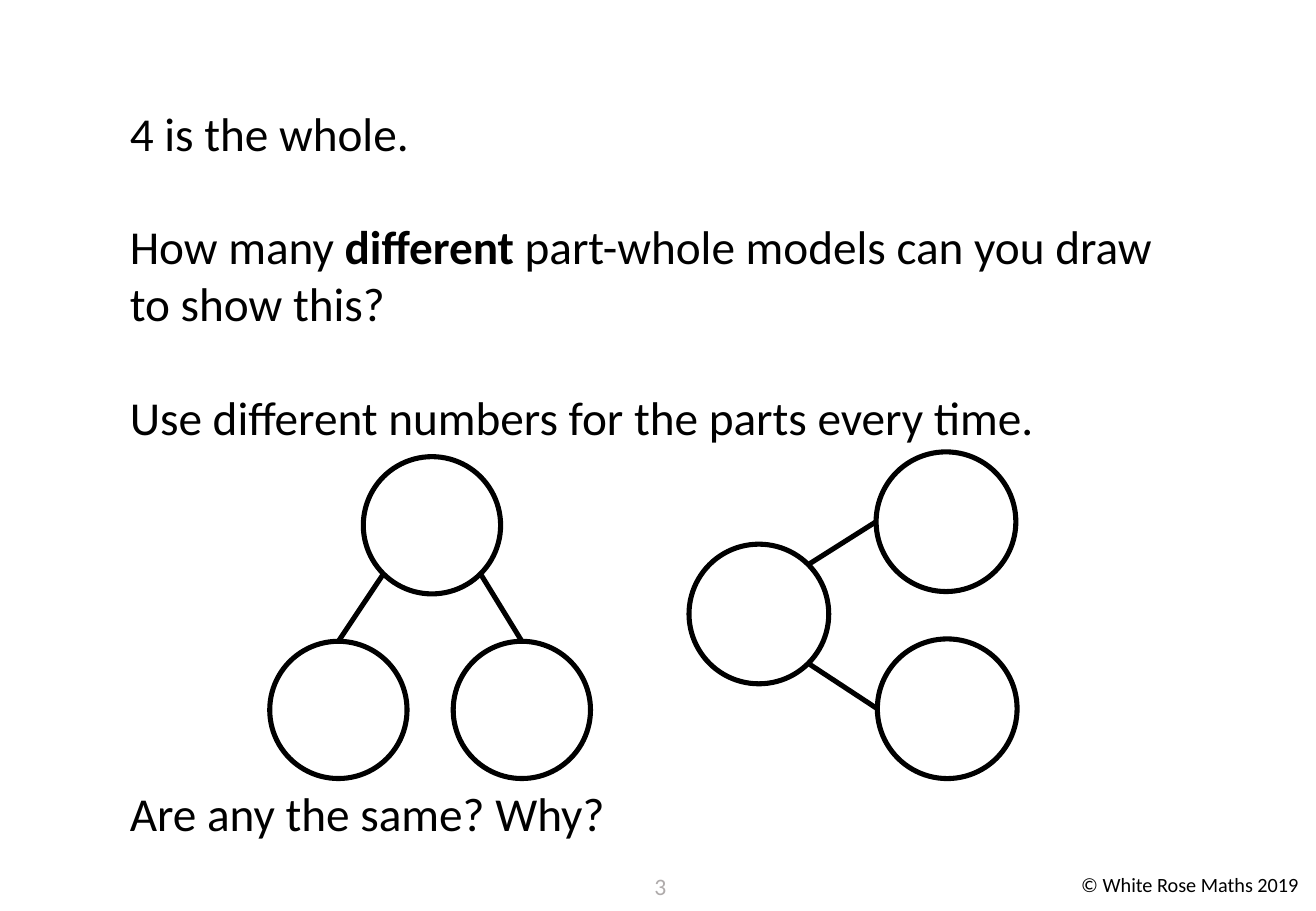
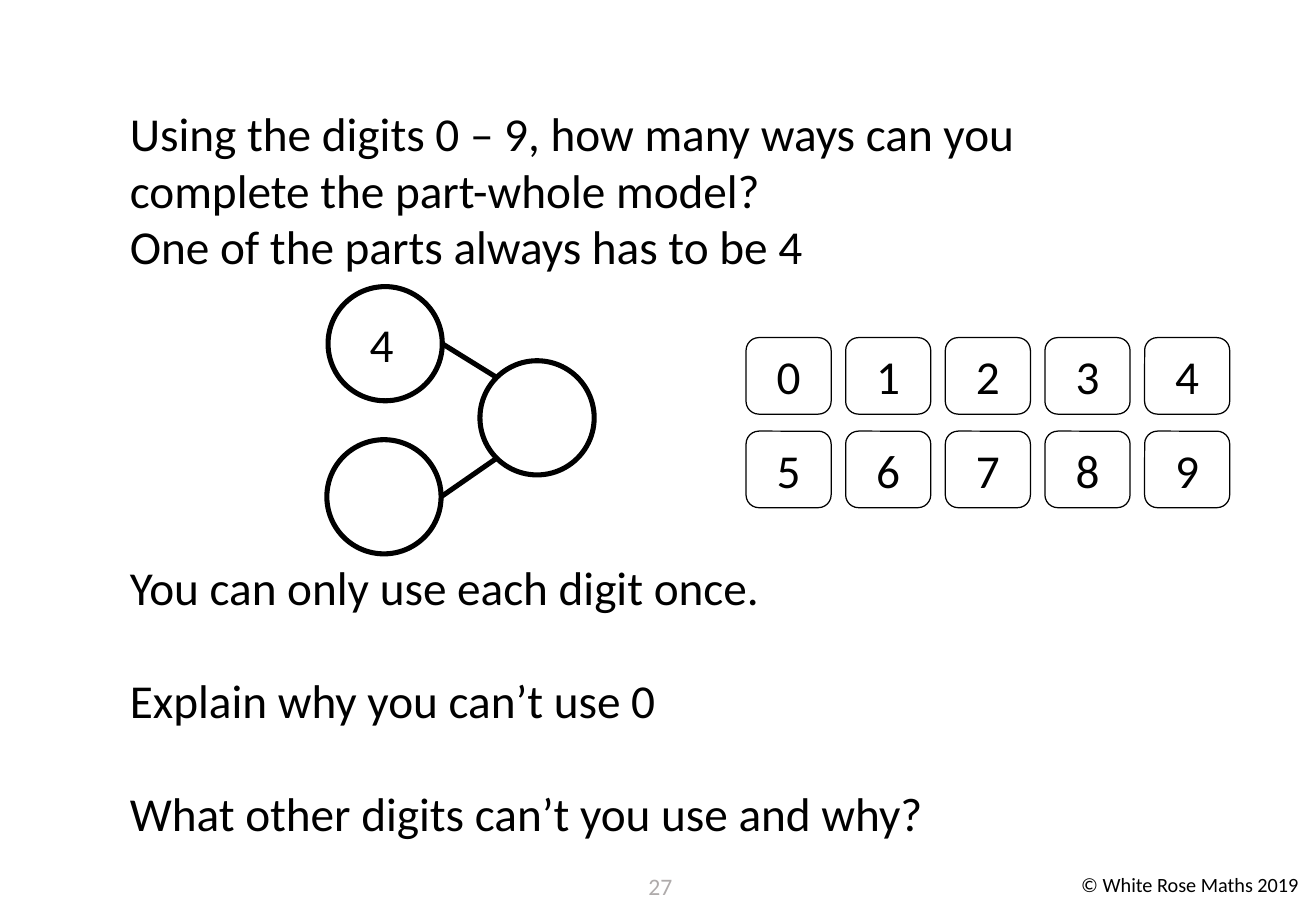
from dataclasses import dataclass
import math

import pptx
import pptx.dml.color
import pptx.enum.shapes
import pptx.enum.text
import pptx.util
from lxml import etree
from pptx.util import Inches

BLACK = pptx.dml.color.RGBColor(0x00, 0x00, 0x00)
WHITE = pptx.dml.color.RGBColor(0xFF, 0xFF, 0xFF)
GREY = pptx.dml.color.RGBColor(0xAF, 0xAB, 0xAB)
FONT = "Calibri"
BODY_SIZE = 28
BODY_LINE = 33.6  # height of one line of body text, in points
MODEL_LINE = 3
CARD_LINE = 0.75
DRAWING_NS = "http://schemas.openxmlformats.org/drawingml/2006/main"

LEFT = pptx.enum.text.PP_ALIGN.LEFT
CENTER = pptx.enum.text.PP_ALIGN.CENTER
TOP = pptx.enum.text.MSO_ANCHOR.TOP
MIDDLE = pptx.enum.text.MSO_ANCHOR.MIDDLE
SHAPE = pptx.enum.shapes.MSO_SHAPE


@dataclass(frozen=True)
class Line:
    """A body paragraph; text between asterisks is bold."""
    text: str
    gap: int = 0  # empty lines above


@dataclass(frozen=True)
class Circle:
    x: float
    y: float


@dataclass(frozen=True)
class PartWholeModel:
    diameter: float
    whole: Circle
    part_circles: tuple[Circle, ...]
    joint: tuple[int, int]  # side of each part that faces the whole


@dataclass(frozen=True)
class Question:
    number: int
    lines: tuple[Line, ...]
    models: tuple[PartWholeModel, ...]


QUESTIONS = (
    Question(
        3,
        (
            Line("4 is the whole."),
            Line("How many *different *part-whole models can you draw to show this?", 1),
            Line("Use different numbers for the parts every time.", 1),
            Line("Are any the same? Why?", 6),
        ),
        (
            PartWholeModel(1.13, Circle(2.99, 3.76),
                           (Circle(2.22, 5.28), Circle(3.73, 5.28)), (0, -1)),
            PartWholeModel(1.15, Circle(5.67, 4.48),
                           (Circle(7.22, 5.26), Circle(7.21, 3.72)), (-1, 0)),
        ),
    ),
    Question(
        27,
        (
            Line("Using the digits 0 – 9, how many ways can you complete the part-whole model?"),
            Line("One of the parts always has to be 4"),
            Line("You can only use each digit once.", 5),
            Line("Explain why you can’t use 0", 1),
            Line("What other digits can’t you use and why?", 1),
        ),
        (
            PartWholeModel(0.94, Circle(3.95, 2.97),
                           (Circle(2.69, 3.62), Circle(2.7, 2.36)), (1, 0)),
        ),
    ),
)


def write(para, text: str, *, size: float = BODY_SIZE, color=BLACK,
          align=LEFT, gap: float = 0) -> None:
    para.alignment = align
    if gap:
        para.space_before = pptx.util.Pt(gap)
    for index, piece in enumerate(text.split("*")):
        span = para.add_run()
        span.text = piece
        span.font.name = FONT
        span.font.size = pptx.util.Pt(size)
        span.font.color.rgb = color
        span.font.bold = index % 2 == 1


def add_text(page, left: float, top: float, width: float, height: float,
             lines: tuple[Line, ...], *, anchor=TOP, **style):
    box = page.shapes.add_textbox(Inches(left), Inches(top), Inches(width), Inches(height))
    frame = box.text_frame
    frame.word_wrap = True
    frame.vertical_anchor = anchor
    for index, line in enumerate(lines):
        para = frame.add_paragraph() if index else frame.paragraphs[0]
        write(para, line.text, gap=line.gap * BODY_LINE, **style)
    return box


def add_outline(page, kind, left: float, top: float, width: float, height: float,
                weight: float, fill=None):
    shape = page.shapes.add_shape(kind, Inches(left), Inches(top), Inches(width), Inches(height))
    shape.shadow.inherit = False
    if fill is None:
        shape.fill.background()
    else:
        shape.fill.solid()
        shape.fill.fore_color.rgb = fill
    shape.line.color.rgb = BLACK
    shape.line.width = pptx.util.Pt(weight)
    return shape


def add_link(page, start: tuple[float, float], end: tuple[float, float]) -> None:
    link = page.shapes.add_connector(
        pptx.enum.shapes.MSO_CONNECTOR.STRAIGHT, *map(Inches, start + end))
    link.line.color.rgb = BLACK
    link.line.width = pptx.util.Pt(MODEL_LINE)
    properties = link.element.spPr
    etree.SubElement(properties, f"{{{DRAWING_NS}}}effectLst")


def draw_model(page, model: PartWholeModel) -> None:
    size, whole = model.diameter, model.whole
    radius = size / 2
    for circle in (whole, *model.part_circles):
        add_outline(page, SHAPE.OVAL, circle.x, circle.y, size, size, MODEL_LINE, WHITE)
    # Each link leaves the whole on the diagonal towards its part
    reach = radius * math.sqrt(0.5)
    side_x, side_y = model.joint
    for part in model.part_circles:
        start = (whole.x + radius + math.copysign(reach, part.x - whole.x),
                 whole.y + radius + math.copysign(reach, part.y - whole.y))
        end = (part.x + radius * (1 + side_x), part.y + radius * (1 + side_y))
        add_link(page, start, end)


def draw_digit_cards(page) -> None:
    for digit in range(10):
        row, column = divmod(digit, 5)
        card = add_outline(page, SHAPE.ROUNDED_RECTANGLE, 6.14 + 0.82 * column,
                           2.78 + 0.77 * row, 0.7, 0.63, CARD_LINE)
        card.text_frame.vertical_anchor = MIDDLE
        write(card.text_frame.paragraphs[0], str(digit), align=CENTER)


def add_question(deck, question: Question):
    page = deck.slides.add_slide(deck.slide_layouts[6])
    # Footer
    add_text(page, 8.8, 7.13, 2.03, 0.3, (Line("© White Rose Maths 2019"),), size=12)
    add_text(page, 5.18, 7.13, 0.51, 0.4, (Line(str(question.number)),),
             size=14, color=GREY, align=CENTER)
    # Question and models
    add_text(page, 0.97, 0.81, 8.81, 6.23, question.lines)
    for model in question.models:
        draw_model(page, model)
    return page


def main() -> None:
    deck = pptx.Presentation()
    deck.slide_width, deck.slide_height = Inches(10.83), Inches(7.5)
    pages = [add_question(deck, question) for question in QUESTIONS]
    # Digit cards and the known part
    draw_digit_cards(pages[1])
    add_text(pages[1], 2.61, 2.54, 1.06, 0.57, (Line("4"),), anchor=MIDDLE, align=CENTER)
    deck.save("out.pptx")


if __name__ == "__main__":
    main()
